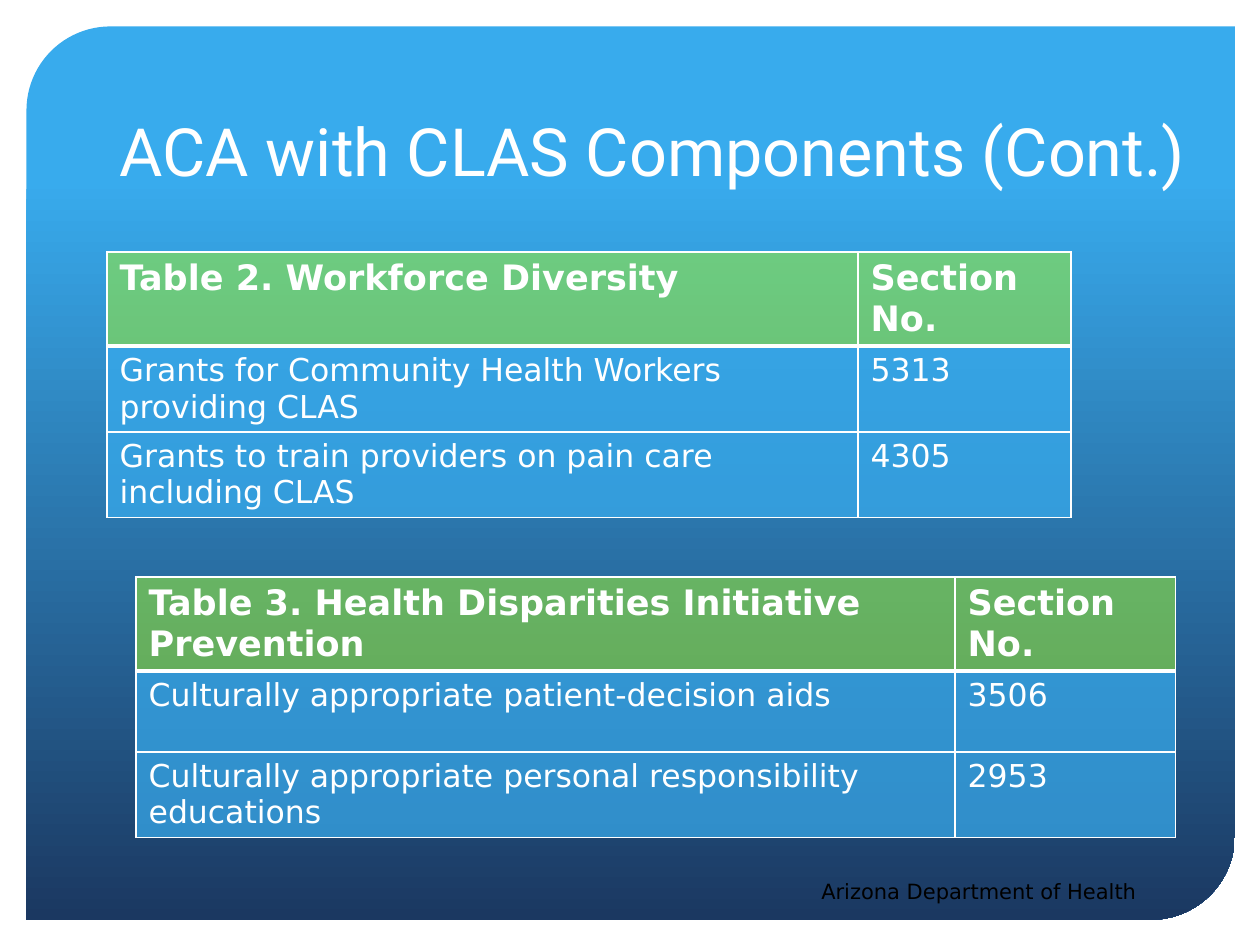
from dataclasses import dataclass

import pptx
import pptx.dml.color
import pptx.enum.shapes
import pptx.enum.text
import pptx.oxml
import pptx.oxml.ns
import pptx.util
from pptx.util import Inches

WHITE, BLACK = "FFFFFF", "000000"
SKY, NAVY, LIME = "38ABED", "1B3861", "9DF131"
SANS = "DejaVu Sans"
HEAD = {"size": pptx.util.Pt(20), "bold": True, "name": SANS}
BODY = {"size": pptx.util.Pt(18), "bold": False, "name": SANS}
TITLE = {"size": pptx.util.Pt(38), "name": "Roboto"}
FOOT = {"size": pptx.util.Pt(12), "name": SANS}


@dataclass
class Grid:
    box: tuple[float, float, float, float]
    cols: tuple[float, ...]
    rows: tuple[float, ...]
    cells: list[tuple[str, str]]


GRIDS = [
    Grid((0.85, 2, 7.65, 2.04), (5.96, 1.69), (0.64, 0.36, 0.64), [
        ("Table 2. Workforce Diversity", "Section No."),
        ("Grants for Community Health Workers providing CLAS", "5313"),
        ("Grants to train providers on pain care including CLAS", "4305"),
    ]),
    Grid((1.08, 4.58, 8.25, 1.98), (6.5, 1.75), (0.64, 0.64, 0.64), [
        ("Table 3. Health Disparities Initiative Prevention", "Section No."),
        ("Culturally appropriate patient-decision aids", "3506"),
        ("Culturally appropriate personal responsibility educations", "2953"),
    ]),
]


def paint(color, code: str) -> None:
    color.rgb = pptx.dml.color.RGBColor.from_string(code)


def place(shape, box: tuple) -> None:
    for name, size in zip(("left", "top", "width", "height"), box):
        setattr(shape, name, Inches(size))


def write(frame, text: str, look: dict, code: str = WHITE) -> None:
    frame.text = text
    font = frame.paragraphs[0].runs[0].font
    for name, value in look.items():
        setattr(font, name, value)
    paint(font.color, code)


def fill_cell(cell, code: str, alpha: int) -> None:
    """Fill a cell with a colour at the given percent of opacity."""
    cell.fill.solid()
    paint(cell.fill.fore_color, code)
    tint = cell._tc.tcPr.find(".//" + pptx.oxml.ns.qn("a:srgbClr"))
    tint.append(pptx.oxml.parse_xml(
        f'<a:alpha {pptx.oxml.ns.nsdecls("a")} val="{alpha * 1000}"/>'))


def edge_cell(cell, top: int, base: int) -> None:
    """Draw white borders; top and base are widths in points."""
    sides = {"L": 1, "R": 1, "T": top, "B": base}
    for spot, (side, width) in enumerate(sides.items()):
        cell._tc.get_or_add_tcPr().insert(spot, pptx.oxml.parse_xml(
            f'<a:ln{side} {pptx.oxml.ns.nsdecls("a")} w="{width * 12700}">'
            f'<a:solidFill><a:srgbClr val="{WHITE}"/></a:solidFill></a:ln{side}>'))


def draw_grid(slide, grid: Grid) -> None:
    table = slide.shapes.add_table(
        len(grid.rows), len(grid.cols), *map(Inches, grid.box)).table
    for col, width in zip(table.columns, grid.cols):
        col.width = Inches(width)
    for row, height in zip(table.rows, grid.rows):
        row.height = Inches(height)
    for r, texts in enumerate(grid.cells):
        for c, text in enumerate(texts):
            cell = table.cell(r, c)
            write(cell.text_frame, text, BODY if r else HEAD)
            fill_cell(cell, *((SKY, 72) if r else (LIME, 54)))
            edge_cell(cell, 3 if r == 1 else 1, 1 if r else 3)


def draw_panel(slide) -> None:
    """Put the shaded panel behind everything else."""
    kind = pptx.enum.shapes.MSO_SHAPE.ROUND_2_DIAG_RECTANGLE
    panel = slide.shapes.add_shape(kind, 0, 0, 0, 0)
    place(panel, (0.21, 0.21, 9.59, 7.09))
    panel.adjustments[0] = 0.094
    panel.adjustments[1] = 0
    panel.shadow.inherit = False
    panel.line.fill.background()
    panel.fill.gradient()
    panel.fill.gradient_angle = 270
    stops = panel.fill.gradient_stops
    for stop, (spot, code) in zip(stops, [(0.17, SKY), (1, NAVY)]):
        stop.position = spot
        paint(stop.color, code)
    slide.shapes._spTree.insert(2, panel._element)


def draw_title(slide) -> None:
    title = slide.shapes.title
    place(title, (0.85, 0.42, 8.73, 1.14))
    frame = title.text_frame
    write(frame, "ACA with CLAS Components (Cont.)", TITLE)
    frame.auto_size = pptx.enum.text.MSO_AUTO_SIZE.NONE
    frame.vertical_anchor = pptx.enum.text.MSO_ANCHOR.BOTTOM
    frame.paragraphs[0].alignment = pptx.enum.text.PP_ALIGN.LEFT


def draw_foot(slide) -> None:
    foot = slide.shapes.add_textbox(0, 0, 0, 0)
    place(foot, (6.42, 6.92, 2.83, 0.3))
    foot.text_frame.word_wrap = True
    foot.text_frame.auto_size = pptx.enum.text.MSO_AUTO_SIZE.SHAPE_TO_FIT_TEXT
    write(foot.text_frame, "Arizona Department of Health", FOOT, BLACK)


def main() -> None:
    deck = pptx.Presentation()
    deck.slide_width, deck.slide_height = Inches(10), Inches(7.5)
    slide = deck.slides.add_slide(deck.slide_layouts.get_by_name("Title Only"))
    draw_panel(slide)
    draw_title(slide)
    for grid in GRIDS:
        draw_grid(slide, grid)
    draw_foot(slide)
    deck.save("out.pptx")


if __name__ == "__main__":
    main()
